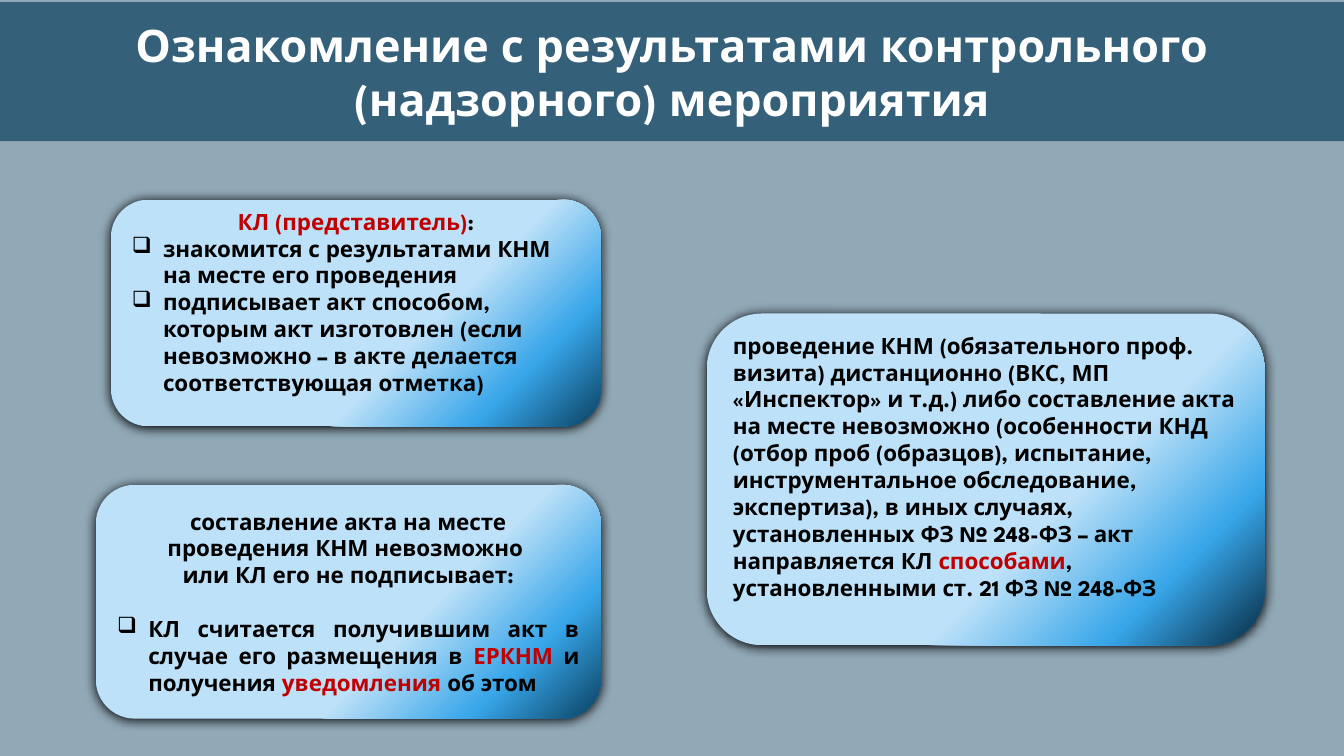
from lxml import etree
from pptx import Presentation
from pptx.dml.color import RGBColor
from pptx.enum.shapes import MSO_SHAPE
from pptx.enum.text import MSO_ANCHOR, PP_ALIGN
from pptx.oxml import parse_xml
from pptx.oxml.ns import qn
from pptx.util import Inches, Pt

LEFT, CENTER, JUSTIFY = PP_ALIGN.LEFT, PP_ALIGN.CENTER, PP_ALIGN.JUSTIFY
MIDDLE = MSO_ANCHOR.MIDDLE
ROUNDED = MSO_SHAPE.ROUNDED_RECTANGLE
NAMESPACE = "http://schemas.openxmlformats.org/drawingml/2006/main"
FONT = "League Spartan"
WIDTH, HEIGHT = Inches(13.33), Inches(7.5)
COLORS = {
    "page": "91A9B7", "banner": "0B4060", "white": "FFFFFF", "black": "000000",
    "red": "C00000", "pale": "BDE1F8", "sky": "38A6E9", "navy": "0B4060",
    "midnight": "072A40",
}


def rgb(name):
    return RGBColor.from_string(COLORS[name])


def place(left, top, width, height):
    """Turn percentages of the slide into lengths."""
    return [round(share * side / 100) for share, side in
            ((left, WIDTH), (top, HEIGHT), (width, WIDTH), (height, HEIGHT))]


def add_span(para, text, size=16, color="black"):
    span = para.add_run()
    span.text = text
    span.font.name = FONT
    span.font.size = Pt(size)
    span.font.bold = True
    span.font.color.rgb = rgb(color)


def add_bullet(para):
    properties = para._p.get_or_add_pPr()
    properties.set("marL", str(Inches(0.31)))
    properties.set("indent", str(-Inches(0.31)))
    etree.SubElement(properties, qn("a:buChar")).set("char", "❑")


def write_paragraph(frame, spans, first=False, align=LEFT, bullet=False, before=0):
    """Write one paragraph from (text, colour) pairs."""
    para = frame.paragraphs[0] if first else frame.add_paragraph()
    para.alignment = align
    para.space_before = Pt(before)
    if bullet:
        add_bullet(para)
    for text, color in spans:
        add_span(para, text, color=color)


def fill_gradient(box, dark):
    stops = "".join(
        f'<a:gs pos="{share * 1000}"><a:srgbClr val="{COLORS[name]}"/></a:gs>'
        for share, name in ((62, "pale"), (82, "sky"), (100, dark)))
    gradient = parse_xml(
        f'<a:gradFill xmlns:a="{NAMESPACE}" rotWithShape="1"><a:gsLst>{stops}</a:gsLst>'
        '<a:lin ang="2700000" scaled="0"/></a:gradFill>')
    box._element.spPr.find(qn("a:prstGeom")).addnext(gradient)


def add_shadow(box):
    box.shadow.inherit = False
    effects = box._element.spPr.find(qn("a:effectLst"))
    effects.append(parse_xml(
        f'<a:outerShdw xmlns:a="{NAMESPACE}" blurRad="{Pt(8.5)}" dist="{Pt(1)}" '
        f'dir="5400000" algn="t" rotWithShape="0"><a:srgbClr val="{COLORS["black"]}"/>'
        '</a:outerShdw>'))


def add_card(page, area, paragraphs, dark="navy", bottom=0.05):
    box = page.shapes.add_shape(ROUNDED, *place(*area))
    box.line.fill.background()
    fill_gradient(box, dark)
    add_shadow(box)
    frame = box.text_frame
    frame.word_wrap = True
    frame.vertical_anchor = MIDDLE
    frame.margin_bottom = Inches(bottom)
    for index, (spans, options) in enumerate(paragraphs):
        write_paragraph(frame, spans, first=index == 0, **options)


def format_title(page, text):
    title = page.shapes.title
    title.left, title.top, title.width, title.height = place(0, 0.27, 100, 18.4)
    title.fill.solid()
    title.fill.fore_color.rgb = rgb("banner")
    color = title._element.spPr.find(qn("a:solidFill"))[0]
    etree.SubElement(color, qn("a:alpha")).set("val", "69000")
    frame = title.text_frame
    frame.word_wrap = True
    frame.vertical_anchor = MIDDLE
    para = frame.paragraphs[0]
    para.alignment = CENTER
    add_span(para, text, size=32, color="white")


def main():
    deck = Presentation()
    deck.slide_width, deck.slide_height = WIDTH, HEIGHT
    page = deck.slides.add_slide(deck.slide_layouts[5])
    page.background.fill.solid()
    page.background.fill.fore_color.rgb = rgb("page")
    format_title(page, "Ознакомление с результатами контрольного (надзорного) мероприятия")

    # What the inspected person does
    add_card(page, (8.25, 26.4, 36.46, 30), [
        ([("КЛ (представитель)", "red"), (":", "black")], {"align": CENTER}),
        ([("знакомится с результатами КНМ на месте его проведения", "black")],
         {"bullet": True}),
        ([("подписывает акт способом, которым акт изготовлен (если невозможно – "
           "в акте делается соответствующая отметка)", "black")], {"bullet": True}),
    ], bottom=0.27)

    # Remote inspection
    add_card(page, (52.59, 41.47, 41.49, 43.87), [
        ([("проведение КНМ (обязательного проф. визита) дистанционно (ВКС, МП "
           "«Инспектор» и т.д.) либо составление акта на месте невозможно "
           "(особенности КНД (отбор проб (образцов), испытание, инструментальное "
           "обследование, экспертиза), в иных случаях, установленных ФЗ № 248-ФЗ – "
           "акт направляется КЛ ", "black"),
          ("способами", "red"),
          (", установленными ст. 21 ФЗ № 248-ФЗ", "black")], {}),
    ], dark="midnight", bottom=0.31)

    # Report not drawn up or not signed on site
    add_card(page, (7.13, 64.13, 37.58, 30.93), [
        ([("составление акта на месте проведения КНМ невозможно ", "black")],
         {"align": CENTER}),
        ([("или КЛ его не подписывает:", "black")], {"align": CENTER}),
        ([("КЛ считается получившим акт в случае его размещения в", "black"),
          (" ЕРКНМ ", "red"), ("и получения ", "black"),
          ("уведомления", "red"), (" об этом", "black")],
         {"align": JUSTIFY, "bullet": True, "before": 19.2}),
    ])
    deck.save("out.pptx")


if __name__ == "__main__":
    main()
